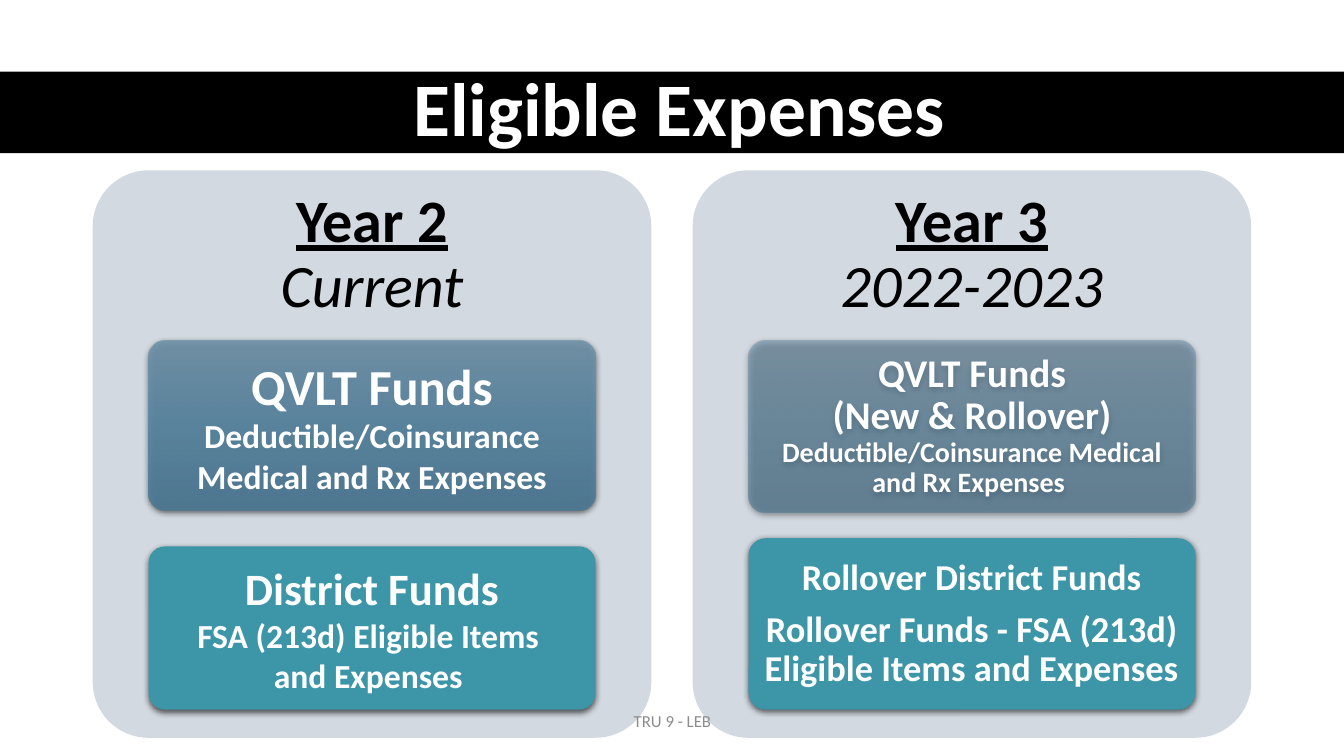
from lxml import etree
from pptx import Presentation
from pptx.dml.color import RGBColor
from pptx.enum import shapes, text
from pptx.oxml import ns
from pptx.util import Inches, Pt

FUNDS = "QVLT Funds"
COSTS = "Deductible/Coinsurance Medical and Rx Expenses"
YEARS = [
    ("Year 2", "Current", [
        dict(top=1.69, high=1.68, fade=90, inset=(0.1, 0.07), after=6,
             paras=[[(FUNDS + "\n", 36), (COSTS, 24)]]),
        dict(top=3.73, high=1.62, inset=(0.09, 0.07),
             paras=[[("District Funds", 32)],
                    [("FSA (213d) Eligible Items \nand Expenses ", 24)]])]),
    ("Year 3", "2022-2023", [
        dict(top=1.69, high=1.7, fade=60, inset=(0.08, 0.06), after=6, lead=0.9,
             paras=[[(FUNDS + "\n(New & Rollover)\n", 28), (COSTS + " ", 20)]]),
        dict(top=3.65, high=1.7, inset=(0.07, 0.05), after=9, lead=0.9,
             paras=[[("Rollover District Funds", 26)],
                    [("Rollover Funds - FSA (213d) Eligible Items and Expenses", 26)]])]),
]


def tint(color, value):
    """Set a colour from a hex string."""
    color.rgb = RGBColor.from_string(value)


def paint(fill, value):
    """Give a solid fill."""
    fill.solid()
    tint(fill.fore_color, value)


def frame(shape, left, top, right, low):
    """Set margins, wrapping and the middle anchor."""
    body = shape.text_frame
    sides = dict(margin_left=left, margin_top=top, margin_right=right, margin_bottom=low)
    for name, size in sides.items():
        setattr(body, name, Inches(size))
    body.word_wrap = True
    body.auto_size = text.MSO_AUTO_SIZE.NONE
    body.vertical_anchor = text.MSO_ANCHOR.MIDDLE
    return body


def write(body, paras, lead=1.0, after=0):
    """Write centred paragraphs made of (words, size, colour, font values) runs."""
    for i, runs in enumerate(paras):
        para = body.add_paragraph() if i else body.paragraphs[0]
        form = dict(alignment=text.PP_ALIGN.CENTER, line_spacing=lead,
                    space_before=Pt(0), space_after=Pt(after))
        for name, value in form.items():
            setattr(para, name, value)
        for words, size, color, style in runs:
            for j, line in enumerate(words.split("\n")):
                if j:
                    para.add_line_break()
                if line:
                    run = para.add_run()
                    run.text = line
                    for name, value in dict(name="Calibri", size=Pt(size), **style).items():
                        setattr(run.font, name, value)
                    tint(run.font.color, color)


def round_box(slide, left, top, wide, high):
    """Add a plain rounded box."""
    box = slide.shapes.add_shape(shapes.MSO_SHAPE.ROUNDED_RECTANGLE,
                                 Inches(left), Inches(top), Inches(wide), Inches(high))
    box.adjustments[0] = 0.1
    box.line.fill.background()
    box.shadow.inherit = False
    return box


def shade(box):
    """Drop a soft shadow below a box."""
    effects = box._element.spPr.find(ns.qn("a:effectLst"))
    drop = etree.SubElement(effects, ns.qn("a:outerShdw"), blurRad=str(Pt(4.5)),
                            dist=str(Pt(1.5)), dir="5400000", rotWithShape="0")
    color = etree.SubElement(drop, ns.qn("a:srgbClr"), val="000000")
    etree.SubElement(color, ns.qn("a:alpha"), val="63000")


def blend(box, alpha):
    """Fill a box with the translucent blue gradient."""
    box.fill.gradient()
    grad = box._element.spPr.find(ns.qn("a:gradFill"))
    stops = grad.find(ns.qn("a:gsLst"))
    for stop in list(stops):
        stops.remove(stop)
    for i, value in enumerate(["7294AB", "5A88A4", "4D7995"]):
        stop = etree.SubElement(stops, ns.qn("a:gs"), pos=str(i * 50000))
        color = etree.SubElement(stop, ns.qn("a:srgbClr"), val=value)
        etree.SubElement(color, ns.qn("a:alpha"), val=str(alpha * 1000))
    grad.find(ns.qn("a:lin")).set("ang", "5400000")


def card(slide, left, top, wide, high, inset, paras, fade=None, lead=1.0, after=0):
    """Draw one fund card."""
    box = round_box(slide, left, top, wide, high)
    if fade:
        blend(box, fade)
    else:
        paint(box.fill, "3D96A7")
    shade(box)
    runs = [[(words, size, "FFFFFF", dict(bold=True)) for words, size in para] for para in paras]
    write(frame(box, *inset, *inset), runs, lead, after)


def panel(slide, left, top, wide, high, year, span, cards):
    """Draw a year panel with its heading and cards."""
    box = round_box(slide, left, top, wide, high)
    paint(box.fill, "D2D9E0")
    head = [(year + "\n", 43, "000000", dict(bold=True, underline=True)),
            (span, 43, "000000", dict(italic=True))]
    write(frame(box, 0.02, 0.02, 0.02, high - 1.67), [head], 0.9, 15)
    for item in cards:
        data = dict(item, top=top + item["top"])
        card(slide, left=left + wide / 10, wide=wide * 0.8, **data)


def banner(slide, left, top, wide, high):
    """Turn the title into a full-width black band."""
    title = slide.shapes.title
    for name, size in dict(left=left, top=top, width=wide, height=high).items():
        setattr(title, name, Inches(size))
    paint(title.fill, "000000")
    write(frame(title, 0.25, 0.05, 0.1, 0.05),
          [[("Eligible Expenses", 54, "FFFFFF", dict(bold=True))]], 0.9)


def footer(slide, left, top, wide, high):
    """Add the footer line."""
    box = slide.shapes.add_textbox(Inches(left), Inches(top), Inches(wide), Inches(high))
    write(frame(box, 0.1, 0.05, 0.1, 0.05), [[("TRU 9 - LEB", 12, "8C8C8C", {})]])


def main():
    """Build and save the slide."""
    deck = Presentation()
    deck.slide_width, deck.slide_height = Inches(13.33), Inches(7.5)
    slide = deck.slides.add_slide(deck.slide_layouts[5])
    banner(slide, 0, 0.71, 13.33, 0.81)
    for i, (year, span, cards) in enumerate(YEARS):
        panel(slide, 0.92 + i * 5.95, 1.69, 5.54, 5.63, year, span, cards)
    footer(slide, 4.42, 6.95, 4.5, 0.4)
    deck.save("out.pptx")


if __name__ == "__main__":
    main()
